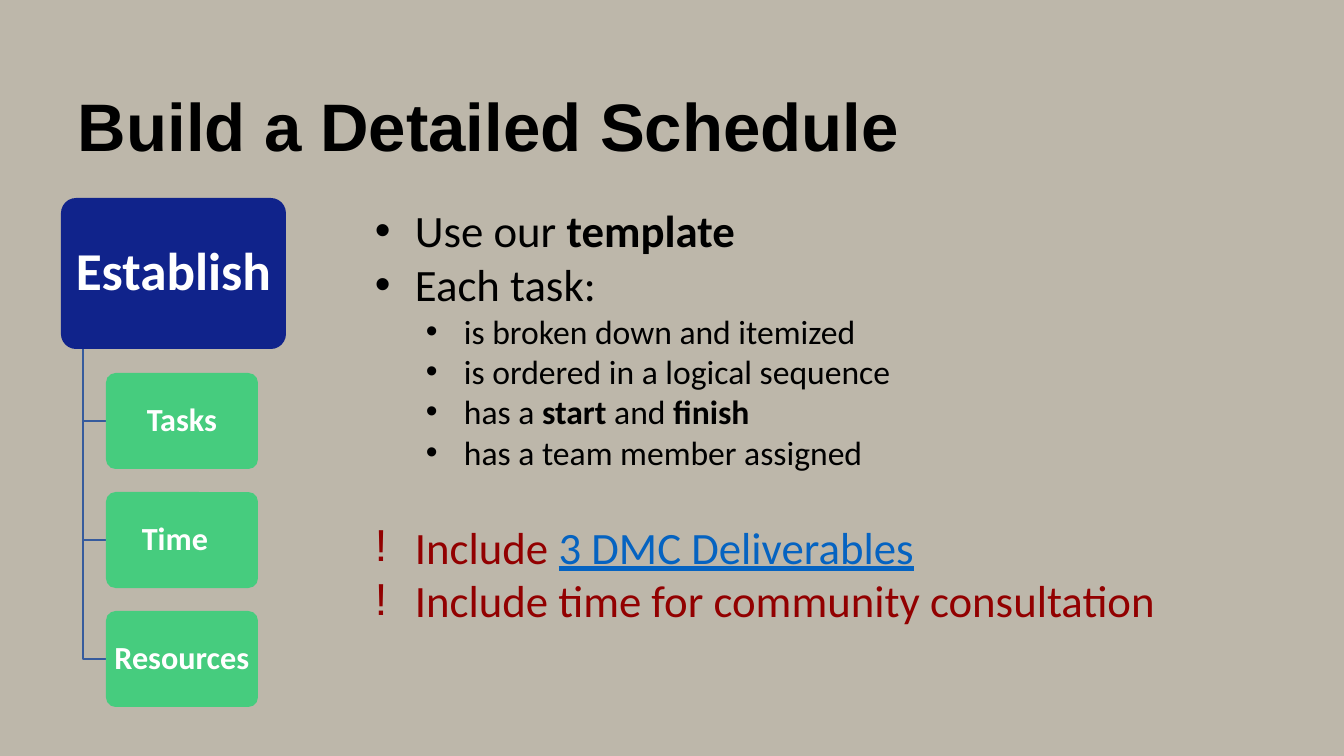
from lxml.etree import SubElement
from pptx import Presentation
from pptx.dml.color import RGBColor
from pptx.enum.shapes import MSO_SHAPE as Shape
from pptx.enum.text import MSO_ANCHOR as Anchor, PP_ALIGN as Align
from pptx.oxml.ns import qn
from pptx.util import Emu, Pt

EMU_PER_PX = 914400 / 100.8

STONE = RGBColor(0xBD, 0xB7, 0xAA)
BLACK = RGBColor(0x00, 0x00, 0x00)
WHITE = RGBColor(0xFF, 0xFF, 0xFF)
NAVY = RGBColor(0x10, 0x23, 0x8B)
GREEN = RGBColor(0x46, 0xCC, 0x7E)
BRANCH_BLUE = RGBColor(0x36, 0x5B, 0x9D)
DARK_RED = RGBColor(0x92, 0x00, 0x00)
LINK_BLUE = RGBColor(0x05, 0x63, 0xC1)


def px(length):
    return Emu(round(length * EMU_PER_PX))


class SlideBuilder:
    heading_font = "Arial"
    body_font = "Calibri"

    def __init__(self, deck):
        self.slide = deck.slides.add_slide(deck.slide_layouts[6])
        fill = self.slide.background.fill
        fill.solid()
        fill.fore_color.rgb = STONE

    def style(self, para, name, size, color, bold=None):
        font = para.font
        font.name, font.size, font.bold = name, Pt(size), bold
        font.color.rgb = color

    def text_frame(self, left, top, width, height):
        box = self.slide.shapes.add_textbox(px(left), px(top), px(width), px(height))
        box.text_frame.word_wrap = True
        return box.text_frame

    def title(self, text, left, top, width, height):
        frame = self.text_frame(left, top, width, height)
        frame.margin_left = frame.margin_top = frame.margin_right = 0
        para = frame.paragraphs[0]
        para.line_spacing = Pt(60)
        self.style(para, self.heading_font, 48, BLACK, True)
        para.add_run().text = text

    def card(self, text, left, top, width, height, color, size, shift=0):
        """Rounded box; shift moves its centred text to the left."""
        card = self.slide.shapes.add_shape(
            Shape.ROUNDED_RECTANGLE, px(left), px(top), px(width), px(height))
        card.adjustments[0] = 0.1
        card.shadow.inherit = False
        card.fill.solid()
        card.fill.fore_color.rgb = color
        card.line.fill.background()
        frame = card.text_frame
        frame.word_wrap = True
        frame.vertical_anchor = Anchor.MIDDLE
        frame.margin_left, frame.margin_right = px(1), px(1 + 2 * shift)
        para = frame.paragraphs[0]
        para.alignment = Align.CENTER
        para.line_spacing = 0.9
        self.style(para, self.body_font, size, WHITE, True)
        para.add_run().text = text

    def branch(self, left, top, right, bottom):
        builder = self.slide.shapes.build_freeform(left, top, EMU_PER_PX)
        builder.add_line_segments([(left, bottom), (right, bottom)], close=False)
        branch = builder.convert_to_shape()
        branch.shadow.inherit = False
        branch.fill.background()
        branch.line.color.rgb = BRANCH_BLUE
        branch.line.width = Pt(1)

    def bullets(self, items, left, top, width, height):
        frame = self.text_frame(left, top, width, height)
        for index, (level, mark, color, gap, spans) in enumerate(items):
            para = frame.paragraphs[0] if index == 0 else frame.add_paragraph()
            size, margin, hang = ((32, 40, 40), (24, 89, 38))[level]
            para.level = level
            if gap:
                para.space_before = Pt(gap)
            props = para._p.get_or_add_pPr()
            props.set("marL", str(px(margin)))
            props.set("indent", str(-px(hang)))
            SubElement(props, qn("a:buFont"), typeface="Arial")
            SubElement(props, qn("a:buChar"), char=mark)
            self.style(para, self.body_font, size, color)
            for text, look in spans:
                span = para.add_run()
                span.text = text
                if look == "bold":
                    span.font.bold = True
                elif look == "link":
                    span.font.underline = True
                    span.font.color.rgb = LINK_BLUE


# level, bullet mark, colour, space before in points, text spans
ITEMS = [
    (0, "•", BLACK, 0, [("Use our", ""), (" template", "bold")]),
    (0, "•", BLACK, 0, [("Each task:", "")]),
    (1, "•", BLACK, 0, [("is broken down and itemized", "")]),
    (1, "•", BLACK, 0, [("is ordered in a logical sequence", "")]),
    (1, "•", BLACK, 0, [("has a ", ""), ("start", "bold"),
                        (" and ", ""), ("finish", "bold")]),
    (1, "•", BLACK, 0, [("has a team member assigned", "")]),
    (0, "!", DARK_RED, 34, [("Include ", ""), ("3 DMC Deliverables", "link")]),
    (0, "!", DARK_RED, 0, [("Include time for community consultation", "")]),
]
STEPS = [("Tasks", 0), ("Time", 7), ("Resources", 0)]


def main():
    deck = Presentation()
    deck.slide_width, deck.slide_height = px(1344), px(756)
    page = SlideBuilder(deck)

    page.title("Build a Detailed Schedule", 78, 81, 937, 117)

    # Hierarchy: one head card and its branches
    page.card("Establish", 61, 198, 225, 151, NAVY, 38)
    step_top, step_pitch, step_height = 373, 119, 96
    for index, (text, shift) in enumerate(STEPS):
        top = step_top + index * step_pitch
        page.branch(83, 349, 106, top + step_height // 2)
        page.card(text, 106, top, 152, step_height, GREEN, 23, shift)

    # Guidance list
    page.bullets(ITEMS, 365, 198, 902, 492)

    deck.save("out.pptx")


if __name__ == "__main__":
    main()
